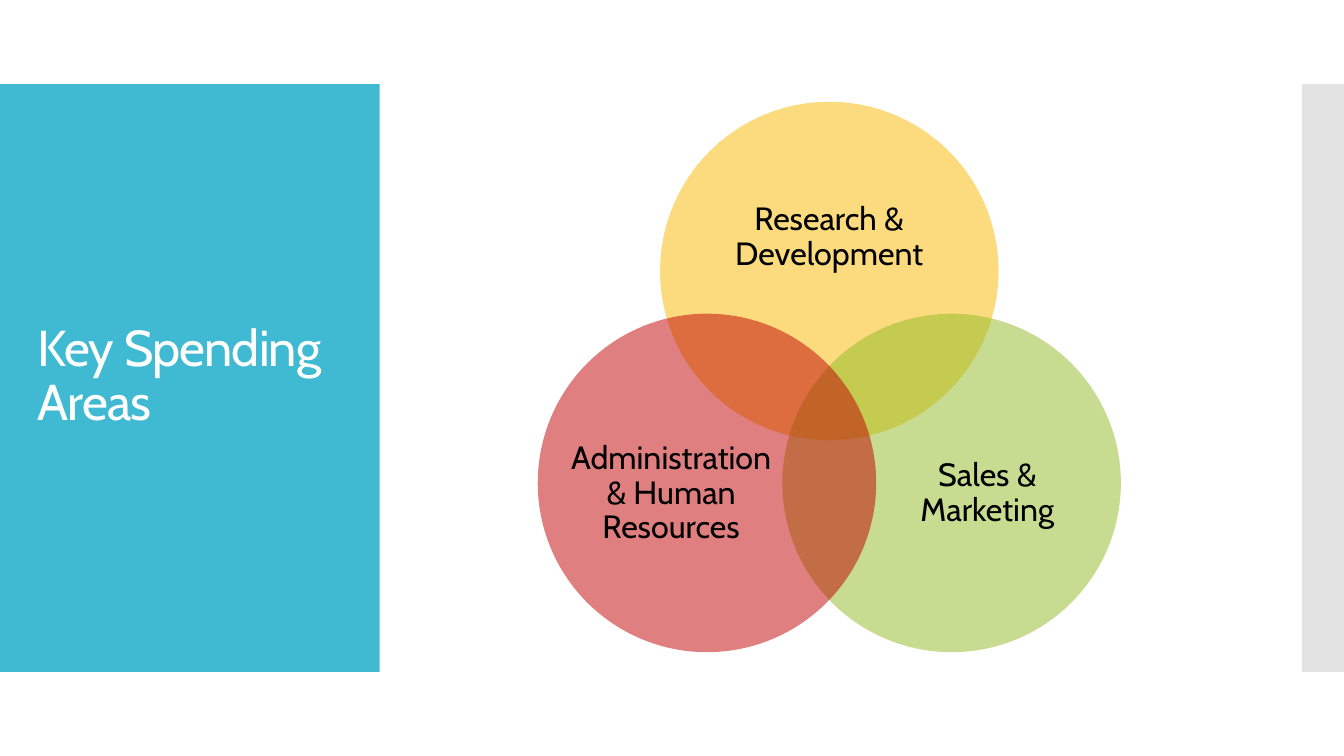
from math import cos, radians, sin

from lxml.etree import SubElement
from pptx import Presentation
from pptx.dml.color import RGBColor
from pptx.enum.shapes import MSO_SHAPE
from pptx.enum.text import MSO_ANCHOR, PP_ALIGN
from pptx.oxml.ns import qn
from pptx.util import Cm, Pt

TITLE = "Key Spending Areas"
AREAS = [
    {"label": "Research & Development", "color": "FAB900", "angle": -90,
     "shift": (0, -0.85), "size": (6.25, 3.84)},
    {"label": "Sales & Marketing", "color": "90BB23", "angle": 30,
     "shift": (0.9, 0.27), "size": (5.13, 4.7)},
    {"label": "Administration & Human Resources", "color": "C00000", "angle": 150,
     "shift": (-0.9, 0.27), "size": (5.13, 4.7)},
]
THEME = {
    "font": "Cabin", "panel": "40BAD2", "strip": "C8C8C8",
    "title": "FFFFFF", "label": "000000",
    "title_size": 36, "label_size": 23, "title_spacing": -60,
}
WIDTH, HEIGHT = 33.87, 19.05
BAND_TOP, BAND_HEIGHT = 2.12, 14.81
PANEL_WIDTH, STRIP_WIDTH = 9.57, 1.06
VENN_CENTER = (20.9, 10.39)
VENN_RADIUS = 3.56
DIAMETER = 8.53


def add_filled(page, kind, left, top, width, height, color, opacity=100):
    shape = page.shapes.add_shape(kind, Cm(left), Cm(top), Cm(width), Cm(height))
    shape.shadow.inherit = False
    shape.line.fill.background()
    shape.fill.solid()
    shape.fill.fore_color.rgb = RGBColor.from_string(color)
    if opacity < 100:
        tint = shape.fill._xPr.find(qn("a:solidFill"))[0]
        SubElement(tint, qn("a:alpha")).set("val", str(opacity * 1000))


def add_text(page, left, top, width, height, text, role, align):
    box = page.shapes.add_textbox(Cm(left), Cm(top), Cm(width), Cm(height))
    frame = box.text_frame
    frame.word_wrap = True
    frame.vertical_anchor = MSO_ANCHOR.MIDDLE
    para = frame.paragraphs[0]
    para.alignment = align
    para.line_spacing = 0.9
    span = para.add_run()
    span.text = text
    span.font.name = THEME["font"]
    span.font.size = Pt(THEME[f"{role}_size"])
    span.font.color.rgb = RGBColor.from_string(THEME[role])
    return frame, span


def add_area(page, area):
    angle = radians(area["angle"])
    x = VENN_CENTER[0] + VENN_RADIUS * cos(angle)
    y = VENN_CENTER[1] + VENN_RADIUS * sin(angle)
    add_filled(page, MSO_SHAPE.OVAL, x - DIAMETER / 2, y - DIAMETER / 2,
               DIAMETER, DIAMETER, area["color"], 50)
    width, height = area["size"]
    shift_x, shift_y = area["shift"]
    frame, _ = add_text(page, x + shift_x - width / 2, y + shift_y - height / 2,
                        width, height, area["label"], "label", PP_ALIGN.CENTER)
    frame.margin_left = frame.margin_right = 0
    frame.margin_top = frame.margin_bottom = 0


def main():
    deck = Presentation()
    deck.slide_width, deck.slide_height = Cm(WIDTH), Cm(HEIGHT)
    page = deck.slides.add_slide(deck.slide_layouts[6])
    add_filled(page, MSO_SHAPE.RECTANGLE, 0, BAND_TOP, PANEL_WIDTH, BAND_HEIGHT,
               THEME["panel"])
    add_filled(page, MSO_SHAPE.RECTANGLE, WIDTH - STRIP_WIDTH, BAND_TOP,
               STRIP_WIDTH, BAND_HEIGHT, THEME["strip"], 50)
    _, span = add_text(page, 0.7, 3.12, 8.18, 12.78, TITLE, "title", PP_ALIGN.LEFT)
    span.font._element.set("spc", str(THEME["title_spacing"]))
    for area in AREAS:
        add_area(page, area)
    deck.save("out.pptx")


if __name__ == "__main__":
    main()
